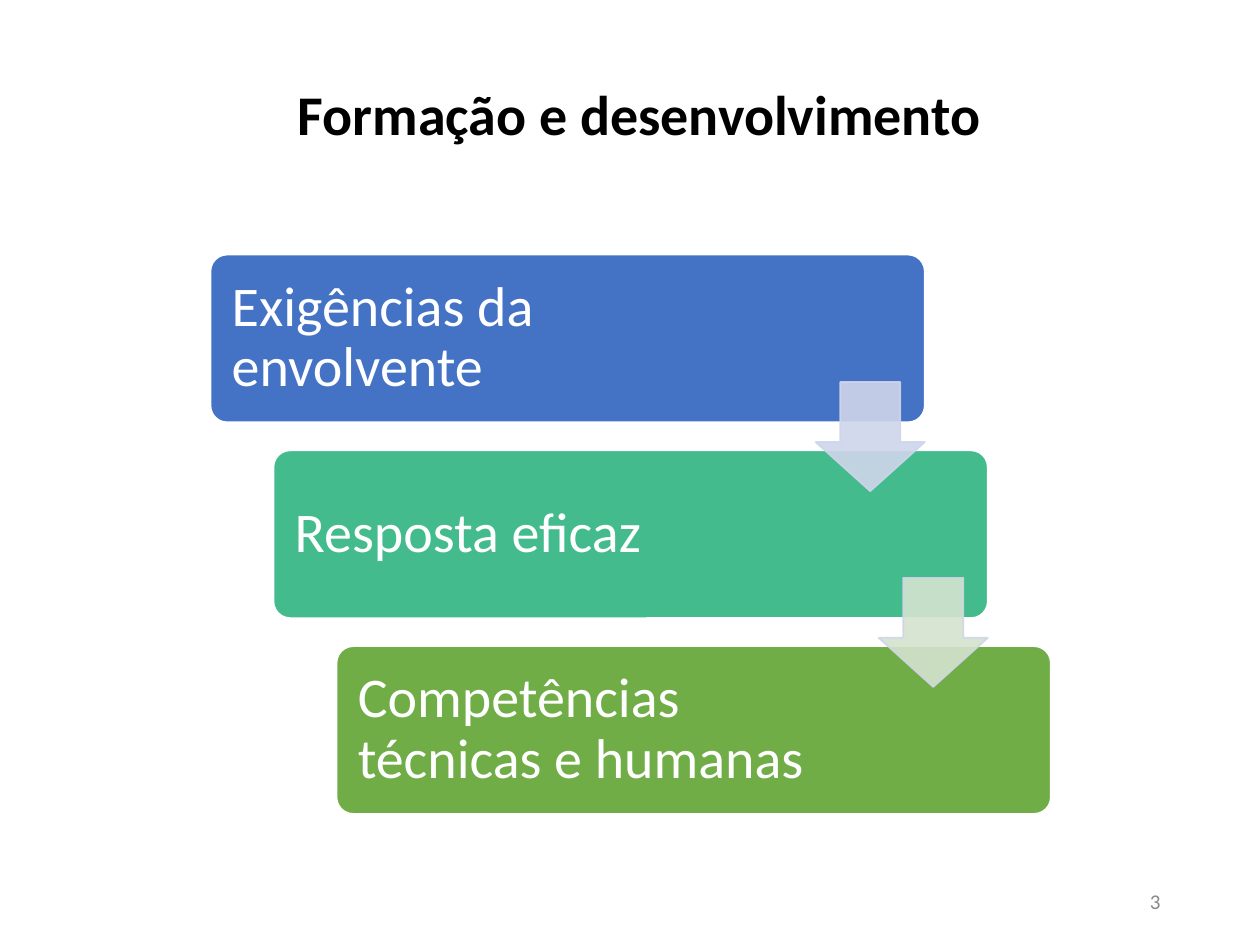
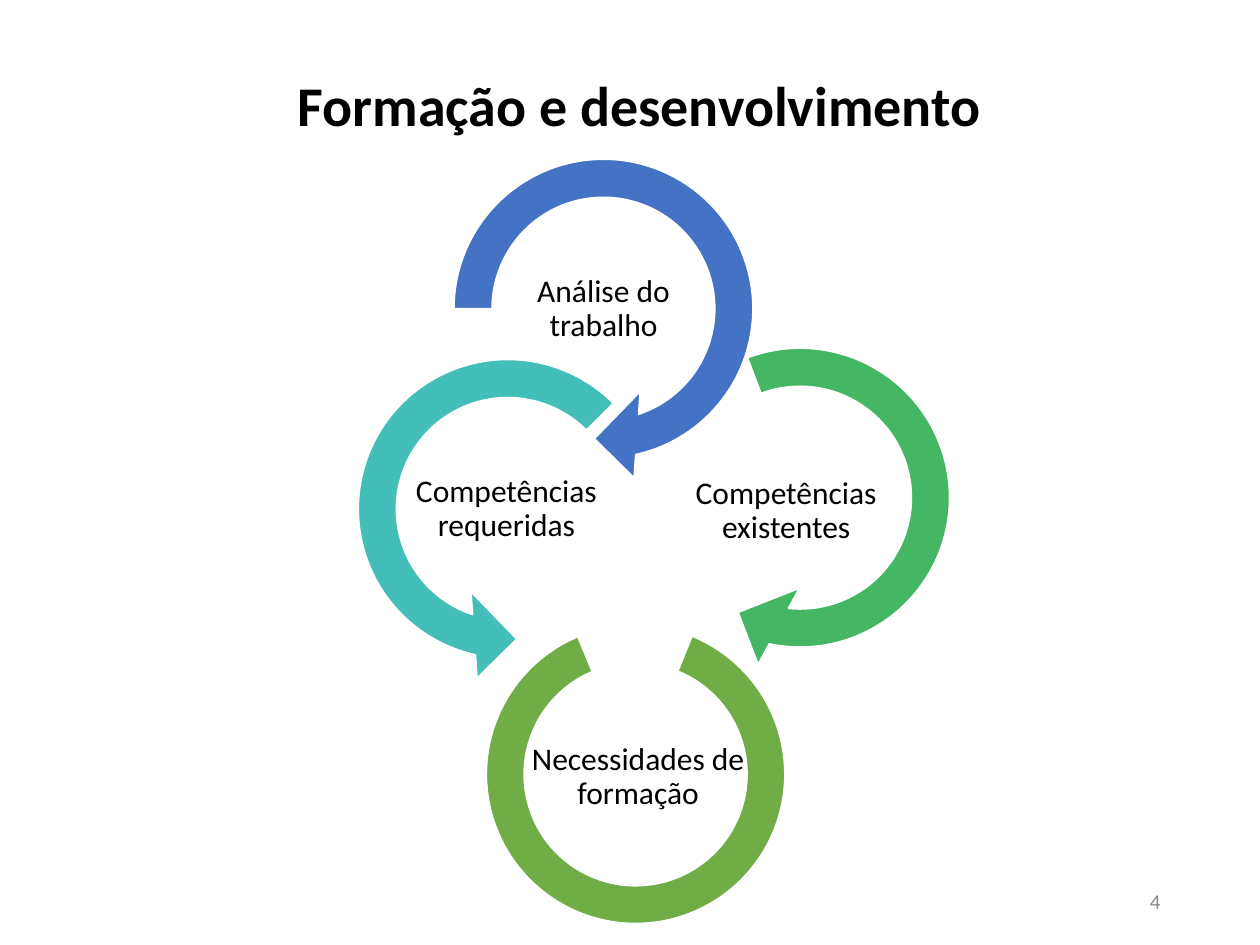
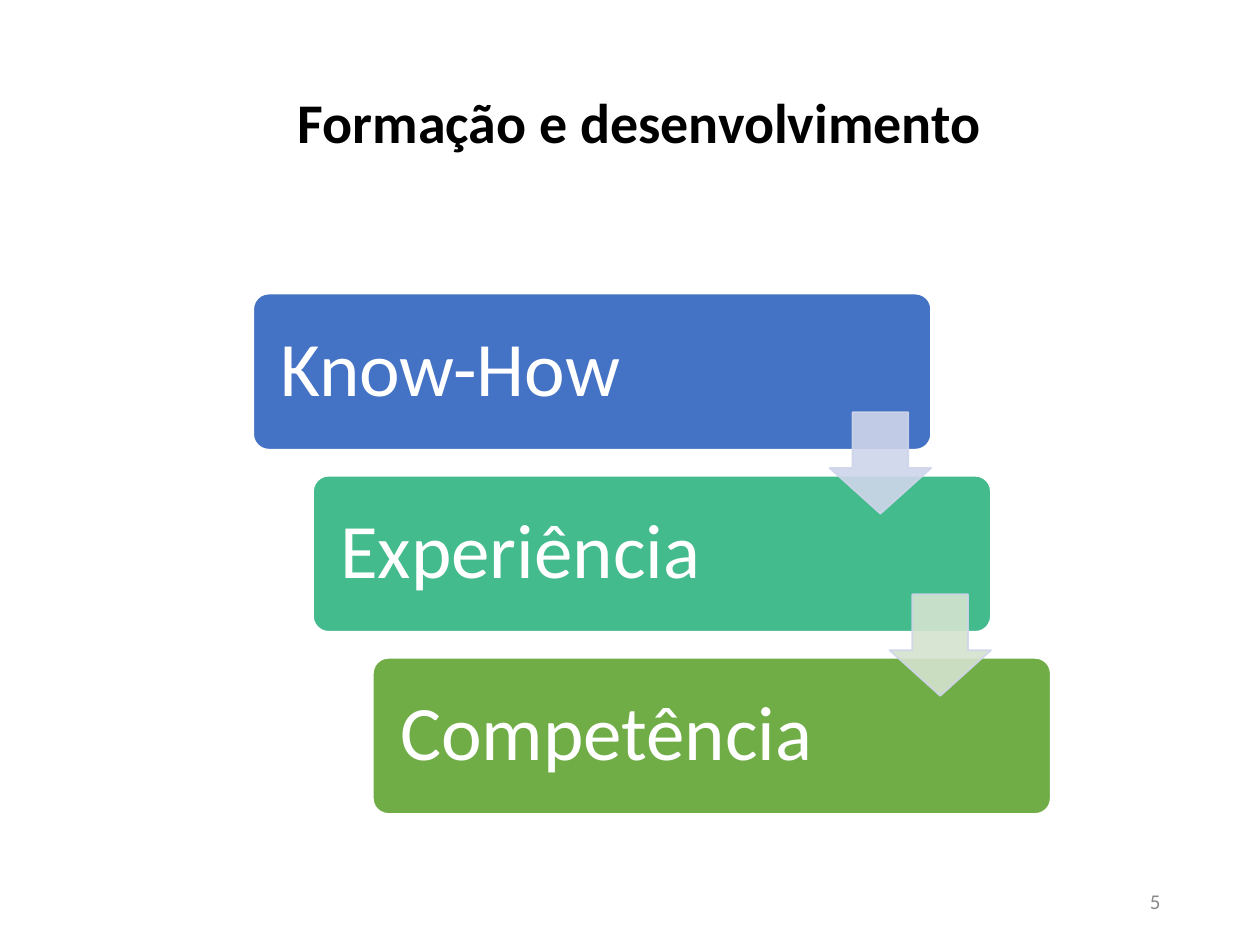
from dataclasses import dataclass

from pptx import Presentation
from pptx.dml.color import RGBColor
from pptx.enum.shapes import MSO_SHAPE
from pptx.enum.text import MSO_ANCHOR, MSO_AUTO_SIZE, PP_ALIGN
from pptx.oxml.ns import qn
from pptx.util import Inches, Pt
from lxml.etree import SubElement

FONT = "Calibri"
TITLE = "Formação e desenvolvimento"
BLACK, WHITE, GREY = "000000", "FFFFFF", "898989"
BLUE, MINT, GREEN = "4472C4", "43BB8D", "70AD47"
TEAL, EMERALD = "43BEB9", "45B664"
PALE_BLUE, PALE_GREEN = "CFD5EA", "D5E3CF"
STEP_COLORS = (BLUE, MINT, GREEN)
ARROW_COLORS = (PALE_BLUE, PALE_GREEN)
FIRST_NUMBER = 3


@dataclass
class Box:
    left: float
    top: float
    width: float
    height: float

    def inches(self):
        return [Inches(value) for value in (self.left, self.top, self.width, self.height)]

    def inner(self, left, top, width, height):
        return Box(self.left + left, self.top + top, width, height)


@dataclass
class Ring:
    kind: MSO_SHAPE
    box: tuple
    rotation: float
    adjustments: tuple
    color: str
    label: str
    label_box: tuple


RINGS = (
    Ring(MSO_SHAPE.CIRCULAR_ARROW, (0.76, 0, 2.76, 2.76), 0,
         (0.11, 11.42, 45, 108, 0.125), BLUE,
         "Análise do trabalho", (1.37, 1, 1.54, 0.77)),
    Ring(MSO_SHAPE.LEFT_CIRCULAR_ARROW, (0, 1.59, 2.76, 2.76), 0,
         (0.11, 11.42, 63, 189, 0.125), TEAL,
         "Competências requeridas", (0.6, 2.59, 1.54, 0.77)),
    Ring(MSO_SHAPE.CIRCULAR_ARROW, (2.32, 1.5, 2.76, 2.76), 24.4,
         (0.11, 11.42, 45, 135, 0.125), EMERALD,
         "Competências existentes", (2.82, 2.6, 1.54, 0.77)),
    Ring(MSO_SHAPE.BLOCK_ARC, (1.21, 3.89, 2.37, 2.37), 292.2,
         (0, 189, 0.127), GREEN,
         "Necessidades de formação", (1.5, 4.7, 1.83, 0.79)),
)


def rgb(color):
    return RGBColor.from_string(color)


def set_opacity(fill_format, percent):
    color = fill_format.fore_color._xFill.find(qn("a:srgbClr"))
    SubElement(color, qn("a:alpha")).set("val", str(percent * 1000))


def write_text(shape, text, size, color, alignment, insets, bold=False, spacing=None):
    frame = shape.text_frame
    frame.word_wrap = True
    frame.auto_size = MSO_AUTO_SIZE.NONE
    frame.vertical_anchor = MSO_ANCHOR.MIDDLE
    frame.margin_left, frame.margin_top, frame.margin_right, frame.margin_bottom = [
        Inches(inset) for inset in insets]
    paragraph = frame.paragraphs[0]
    paragraph.alignment = alignment
    if spacing:
        paragraph.line_spacing = spacing
    run = paragraph.add_run()
    run.text = text
    run.font.name = FONT
    run.font.size = Pt(size)
    run.font.bold = bold
    run.font.color.rgb = rgb(color)


def add_preset(slide, kind, box, adjustments, fill, line=WHITE, opacity=None):
    shape = slide.shapes.add_shape(kind, *box.inches())
    shape.shadow.inherit = False
    for index, value in enumerate(adjustments):
        shape.adjustments[index] = value
    shape.fill.solid()
    shape.fill.fore_color.rgb = rgb(fill)
    shape.line.color.rgb = rgb(line)
    shape.line.width = Pt(1)
    if opacity:
        set_opacity(shape.fill, opacity)
        set_opacity(shape.line.fill, opacity)
    return shape


def add_titled_slide(presentation, title_top):
    slide = presentation.slides.add_slide(presentation.slide_layouts[5])
    title = slide.shapes.title
    title.left, title.top, title.width, title.height = Box(0, title_top, 10, 0.88).inches()
    write_text(title, TITLE, 32, BLACK, PP_ALIGN.CENTER, (0.25, 0.33, 0.1, 0), bold=True)
    number = slide.shapes.add_textbox(*Box(7.06, 6.95, 2.25, 0.4).inches())
    page = FIRST_NUMBER + len(presentation.slides) - 1
    write_text(number, str(page), 12, GREY, PP_ALIGN.RIGHT, (0.1, 0.05, 0.1, 0.05))
    return slide


def add_staircase(slide, area, labels, size, inset):
    width, height = 0.85 * area.width, 0.3 * area.height
    steps = [area.inner(index * 0.075 * area.width, index * 0.35 * area.height, width, height)
             for index in range(len(labels))]
    for step, label, color in zip(steps, labels, STEP_COLORS):
        shape = add_preset(slide, MSO_SHAPE.ROUNDED_RECTANGLE, step, (0.1,), color)
        insets = (inset, inset, inset + 0.24 * width, inset)
        write_text(shape, label, size, WHITE, PP_ALIGN.LEFT, insets, spacing=0.9)
    side = 0.65 * height
    for step, color in zip(steps, ARROW_COLORS):
        arrow = step.inner(width - side, 0.76 * height, side, side)
        add_preset(slide, MSO_SHAPE.DOWN_ARROW, arrow, (0.55, 0.45), color, PALE_BLUE, 90)


def add_ring_chain(slide, area):
    for ring in RINGS:
        shape = add_preset(slide, ring.kind, area.inner(*ring.box), ring.adjustments, ring.color)
        shape.rotation = ring.rotation
    for ring in RINGS:
        label = slide.shapes.add_textbox(*area.inner(*ring.label_box).inches())
        write_text(label, ring.label, 18, BLACK, PP_ALIGN.CENTER, (0.01,) * 4, spacing=0.9)


def main():
    presentation = Presentation()
    presentation.slide_width = Inches(10)
    presentation.slide_height = Inches(7.5)

    slide = add_titled_slide(presentation, 0.29)
    demands = ("Exigências da envolvente", "Resposta eficaz", "Competências técnicas e humanas")
    add_staircase(slide, Box(1.67, 2.02, 6.67, 4.44), demands, 32, 0.13)

    slide = add_titled_slide(presentation, 0.22)
    add_ring_chain(slide, Box(2.65, 1.07, 5.08, 6.26))

    slide = add_titled_slide(presentation, 0.36)
    skills = ("Know-How", "Experiência", "Competência")
    add_staircase(slide, Box(2.01, 2.33, 6.33, 4.13), skills, 44, 0.18)

    presentation.save("out.pptx")


if __name__ == "__main__":
    main()
